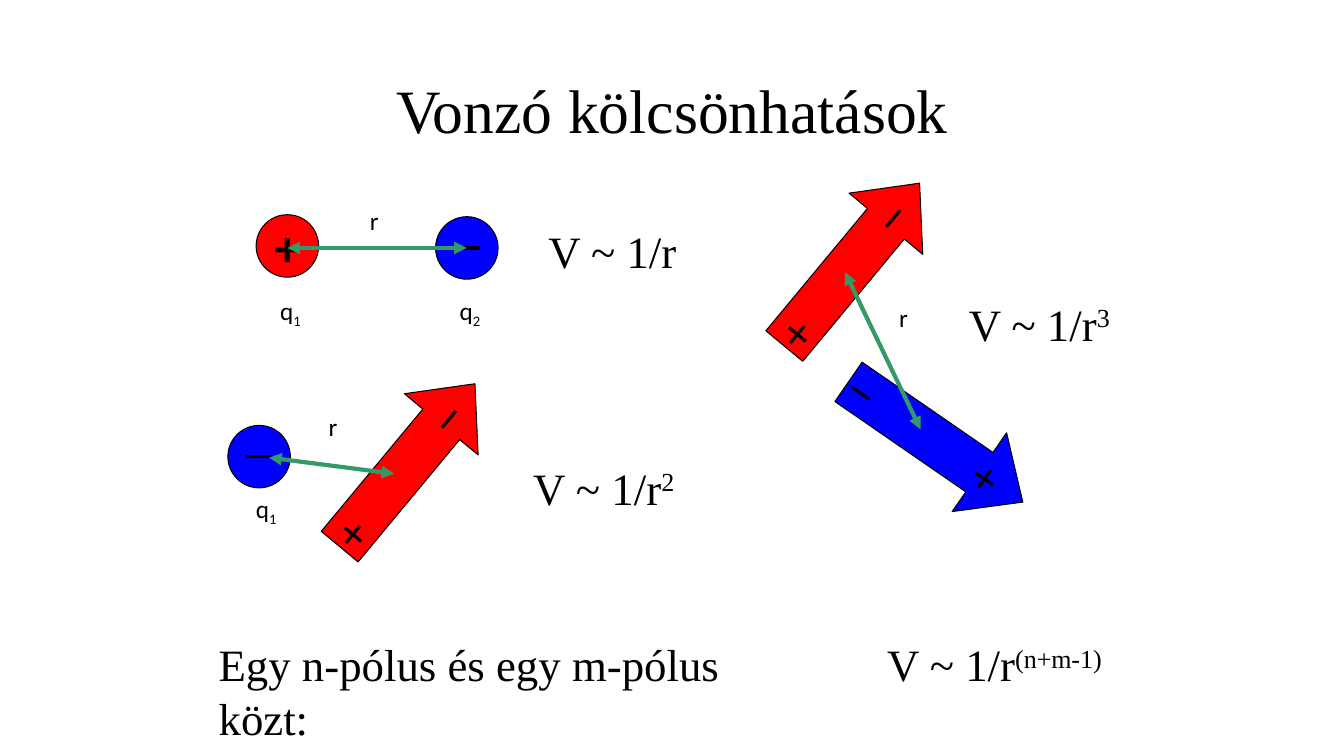
from lxml.etree import SubElement
from pptx import Presentation
from pptx.dml.color import RGBColor
from pptx.enum.shapes import MSO_CONNECTOR, MSO_SHAPE
from pptx.enum.text import MSO_ANCHOR, PP_ALIGN
from pptx.oxml.ns import qn
from pptx.util import Inches, Pt

SERIF, SANS, SIGN = "Times New Roman", "Calibri", "Arial"
BLACK, RED, BLUE, GREEN = "000000", "FF0000", "0000FF", "339966"


def color(code):
    return RGBColor.from_string(code)


def box(*sizes):
    return [Inches(size) for size in sizes]


class Board:
    """Holds the slide and draws charges, dipoles and labels on it."""

    def __init__(self, slide):
        self.shapes = slide.shapes

    def run(self, para, text, size, font, base=0, bold=False):
        """Add a run; base shifts it up or down, in percent."""
        run = para.add_run()
        run.text = text
        run.font.size = Pt(size)
        run.font.name = font
        run.font.bold = bold
        run.font.color.rgb = color(BLACK)
        if base:
            run._r.get_or_add_rPr().set("baseline", str(base * 1000))

    def text(self, at, text, size=32, font=SERIF, index="", base=30, wrap=False):
        frame = self.shapes.add_textbox(*box(*at)).text_frame
        frame.word_wrap = wrap
        para = frame.paragraphs[0]
        self.run(para, text, size, font)
        if index:
            self.run(para, index, size, font, base)
        return frame

    def label(self, left, top, text, index=""):
        width = 0.42 if index else 0.29
        self.text((left, top, width, 0.4), text, 18, SANS, index, -25)

    def title(self, at, text):
        frame = self.text(at, text, 44, wrap=True)
        frame.vertical_anchor = MSO_ANCHOR.MIDDLE
        para = frame.paragraphs[0]
        para.alignment = PP_ALIGN.CENTER
        para.line_spacing = 0.9

    def shape(self, kind, at, fill):
        shape = self.shapes.add_shape(kind, *box(*at))
        shape.shadow.inherit = False
        shape.fill.solid()
        shape.fill.fore_color.rgb = color(fill)
        shape.line.color.rgb = color(BLACK)
        shape.line.width = Pt(0.75)
        shape.text_frame.vertical_anchor = MSO_ANCHOR.MIDDLE
        return shape

    def line(self, start, end, tint=GREEN, width=3, heads=True):
        line = self.shapes.add_connector(
            MSO_CONNECTOR.STRAIGHT, *box(*start, *end))
        line.line.color.rgb = color(tint)
        line.line.width = Pt(width)
        if heads:
            for tag in ("a:headEnd", "a:tailEnd"):
                SubElement(line.line._get_or_add_ln(), qn(tag), type="triangle")
        SubElement(line._element.spPr, qn("a:effectLst"))

    def charge(self, x, y, fill, plus=False):
        """Draw a round charge centred at x, y with its sign."""
        ball = self.shape(MSO_SHAPE.OVAL, (x - 0.31, y - 0.31, 0.62, 0.62), fill)
        if plus:
            ball.text_frame.word_wrap = False
            para = ball.text_frame.paragraphs[0]
            para.alignment = PP_ALIGN.CENTER
            self.run(para, "+", 36, SANS, bold=True)
        else:
            self.line((x - 0.13, y), (x + 0.13, y), BLACK, 2.25, heads=False)

    def dipole(self, left, top, turn, fill, signs):
        """Draw a block arrow with one sign near each end."""
        arrow = self.shape(MSO_SHAPE.RIGHT_ARROW, (left, top, 2.1, 0.95), fill)
        arrow.adjustments[0] = 0.5
        arrow.adjustments[1] = 0.55
        arrow.rotation = turn
        frame = arrow.text_frame
        frame.word_wrap = True
        frame.margin_left, frame.margin_right = box(0.04, 0)
        para = frame.paragraphs[0]
        para.alignment = PP_ALIGN.LEFT
        tabs = SubElement(para._p.get_or_add_pPr(), qn("a:tabLst"))
        SubElement(tabs, qn("a:tab"), pos=str(Inches(1.49)), algn="l")
        self.run(para, "\t".join(signs), 32, SIGN)


def main():
    deck = Presentation()
    deck.slide_width, deck.slide_height = box(13.33, 7.5)
    board = Board(deck.slides.add_slide(deck.slide_layouts[6]))
    board.title((0.92, 0.4, 11.5, 1.45), "Vonzó kölcsönhatások")

    # Two charges
    board.charge(2.85, 2.44, RED, plus=True)
    board.charge(4.63, 2.46, BLUE)
    board.label(2.68, 2.88, "q", "1")
    board.label(4.46, 2.88, "q", "2")
    board.line((2.85, 2.46), (4.63, 2.46))
    board.label(3.57, 1.99, "r")

    # Charge and dipole
    board.label(2.44, 4.84, "q", "1")
    board.dipole(2.99, 4.14, 309.7, RED, "+−")
    board.charge(2.57, 4.53, BLUE)
    board.line((2.67, 4.54), (3.91, 4.7))
    board.label(3.16, 4.03, "r")

    # Two dipoles
    board.dipole(7.4, 2.15, 309.7, RED, "+−")
    board.dipole(8.23, 3.91, 34.6, BLUE, "−+")
    board.line((8.38, 2.7), (9.13, 4.26))
    board.label(8.82, 2.95, "r")

    # Potentials
    for left, top, width, power in (
        (5.34, 2.17, 1.48, ""),
        (5.19, 4.52, 1.62, "2"),
        (9.51, 2.89, 1.62, "3"),
        (8.7, 6.27, 2.48, "(n+m-1)"),
    ):
        board.text((left, top, width, 0.63), "V ~ 1/r", index=power)
    board.text((2.07, 6.27, 6, 0.63), "Egy n-pólus és egy m-pólus közt:", wrap=True)
    deck.save("out.pptx")


if __name__ == "__main__":
    main()
